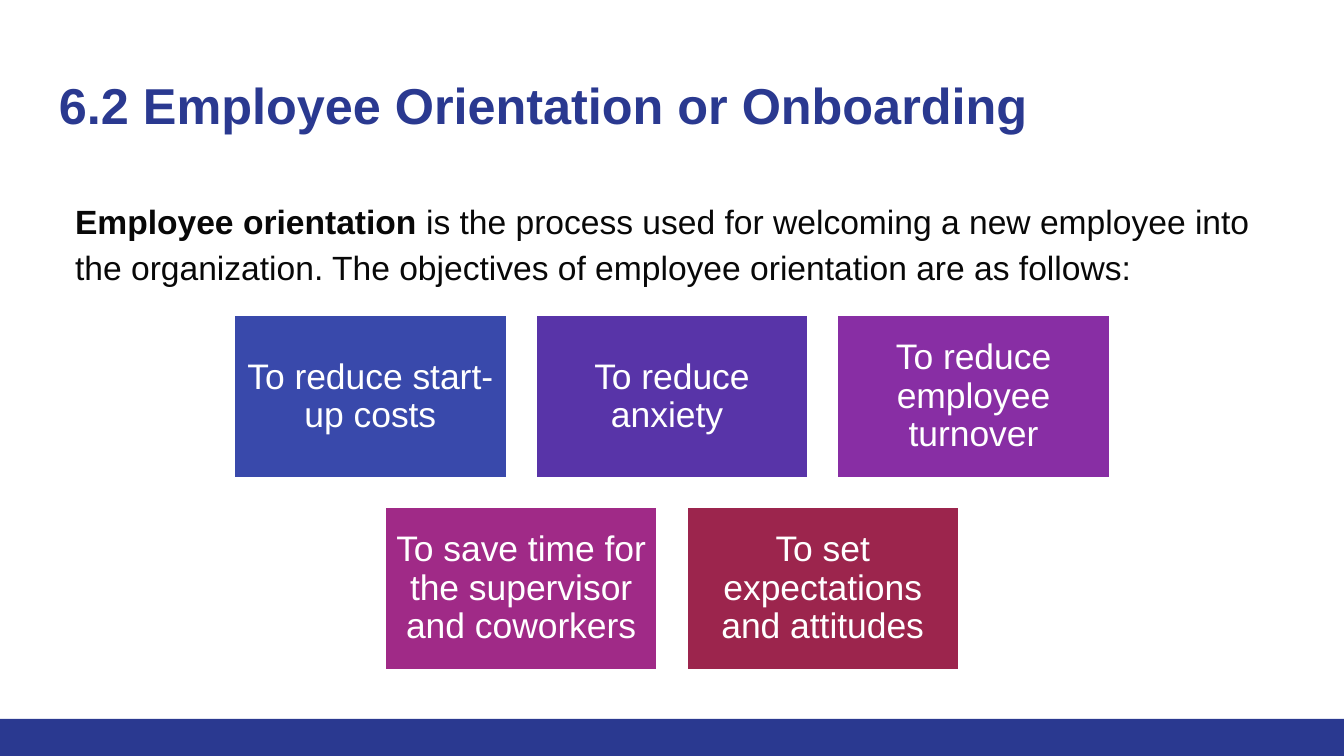
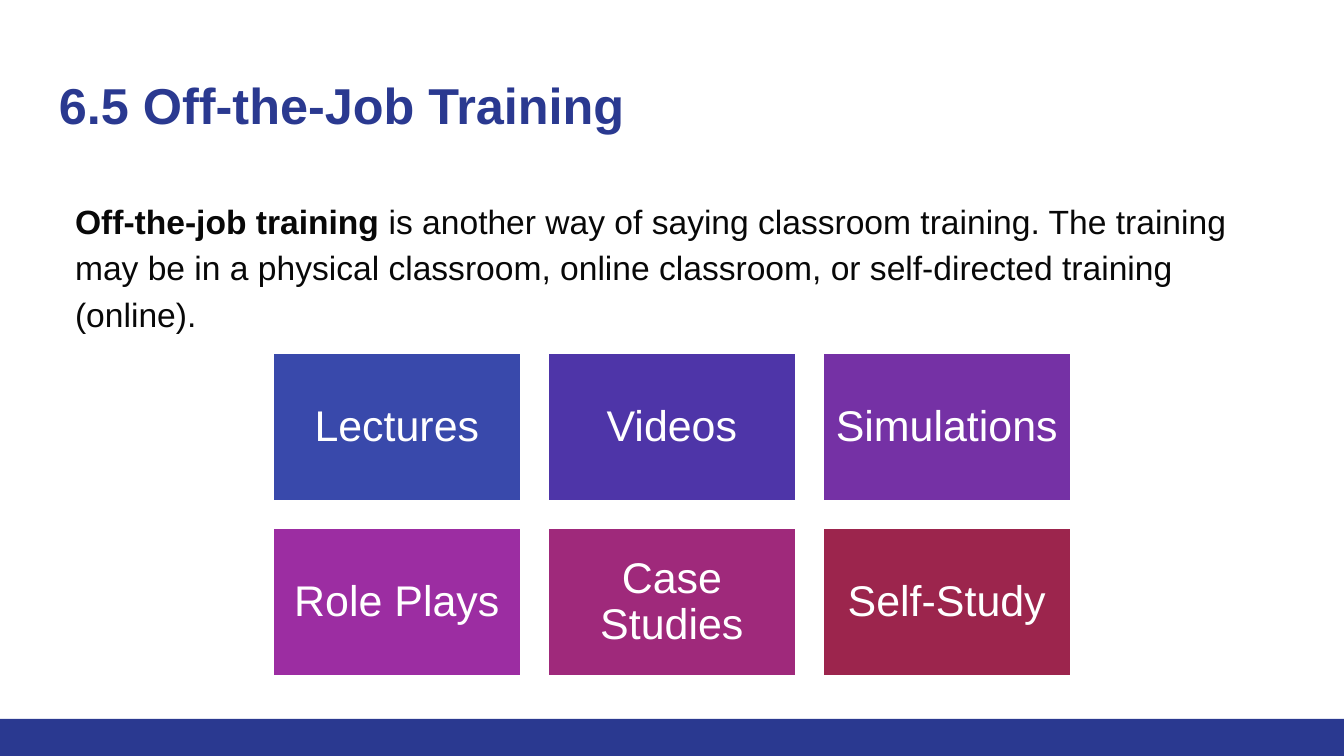
from dataclasses import dataclass

from pptx import Presentation
from pptx.dml.color import RGBColor
from pptx.enum.shapes import MSO_SHAPE
from pptx.enum.text import MSO_ANCHOR, PP_ALIGN
from pptx.util import Inches, Pt

RECTANGLE = MSO_SHAPE.RECTANGLE
MIDDLE, TOP = MSO_ANCHOR.MIDDLE, MSO_ANCHOR.TOP
CENTER, LEFT = PP_ALIGN.CENTER, PP_ALIGN.LEFT


@dataclass(frozen=True)
class Theme:
    font: str = "Arial"
    navy: str = "2A3990"
    ink: str = "080808"
    white: str = "FFFFFF"
    title_size: int = 27
    body_size: int = 18


THEME = Theme()
WIDTH, HEIGHT = Inches(10), Inches(5.625)
MARGIN = 0.034 * WIDTH
CONTENT_WIDTH = WIDTH - 2 * MARGIN
BAND_TOP = 0.951 * HEIGHT
TILE_RATIO = 0.6  # tile height per tile width
GAP_RATIO = 0.1   # gap per tile width

OBJECTIVES = [
    [("To reduce start-up costs", "3949AB"),
     ("To reduce anxiety ", "5834A8"),
     ("To reduce employee turnover", "882EA4")],
    [("To save time for the supervisor and coworkers", "A02A87"),
     ("To set expectations and attitudes", "9C254D")],
]
METHODS = [
    [("Lectures", "3949AB"), ("Videos", "4E35A8"), ("Simulations", "7531A5")],
    [("Role Plays", "9C2DA2"), ("Case Studies", "9F297B"),
     ("Self-Study", "9C254D")],
]


def color(value):
    return RGBColor.from_string(value)


def prepare_frame(shape, inset, anchor=TOP):
    frame = shape.text_frame
    frame.word_wrap = True
    frame.vertical_anchor = anchor
    frame.margin_left = frame.margin_right = Inches(inset)
    frame.margin_top = frame.margin_bottom = Inches(inset)
    return frame


def add_run(paragraph, text, size, text_color, bold=False):
    run = paragraph.add_run()
    run.text = text
    run.font.name = THEME.font
    run.font.size = Pt(size)
    run.font.bold = bold
    run.font.color.rgb = color(text_color)


def add_rectangle(slide, left, top, width, height, fill):
    shape = slide.shapes.add_shape(
        RECTANGLE, int(left), int(top), int(width), int(height))
    shape.shadow.inherit = False
    shape.fill.solid()
    shape.fill.fore_color.rgb = color(fill)
    shape.line.fill.background()
    return shape


def add_text_paragraph(slide, top, height):
    """Add a text box across the content width and return its paragraph."""
    box = slide.shapes.add_textbox(
        int(MARGIN), int(top), int(CONTENT_WIDTH), int(height))
    paragraph = prepare_frame(box, 0.1).paragraphs[0]
    paragraph.alignment = LEFT
    return paragraph


def add_title(slide, text):
    paragraph = add_text_paragraph(slide, 0.08 * HEIGHT, 0.117 * HEIGHT)
    add_run(paragraph, text, THEME.title_size, THEME.navy, bold=True)


def add_definition(slide, term, explanation):
    paragraph = add_text_paragraph(slide, 0.24 * HEIGHT, 0.65 * HEIGHT)
    paragraph.line_spacing = 1.15
    paragraph_properties = paragraph._p.get_or_add_pPr()
    paragraph_properties.set("marL", str(Inches(0.12)))
    paragraph_properties.set("indent", "0")
    add_run(paragraph, term, THEME.body_size, THEME.ink, bold=True)
    add_run(paragraph, explanation, THEME.body_size, THEME.ink)


def add_tile(slide, left, top, width, text, fill, size):
    tile = add_rectangle(slide, left, top, width, TILE_RATIO * width, fill)
    tile.line.color.rgb = color(THEME.white)
    tile.line.width = Pt(2)
    paragraph = prepare_frame(tile, 0.08, MIDDLE).paragraphs[0]
    paragraph.alignment = CENTER
    paragraph.line_spacing = 0.9
    add_run(paragraph, text, size, THEME.white)


def add_tile_rows(slide, rows, top, tile_width, size):
    """Stack rows of equal tiles, each row centred on the slide."""
    gap = GAP_RATIO * tile_width
    column_step = tile_width + gap
    row_step = TILE_RATIO * tile_width + gap
    for row_index, row in enumerate(rows):
        row_left = (WIDTH - len(row) * column_step + gap) / 2
        for column, (text, fill) in enumerate(row):
            add_tile(slide, row_left + column * column_step,
                     top + row_index * row_step, tile_width, text, fill, size)


def add_content_slide(presentation, title, term, explanation):
    slide = presentation.slides.add_slide(presentation.slide_layouts[6])
    add_rectangle(slide, 0, BAND_TOP, WIDTH, HEIGHT - BAND_TOP, THEME.navy)
    add_title(slide, title)
    add_definition(slide, term, explanation)
    return slide


def main():
    presentation = Presentation()
    presentation.slide_width, presentation.slide_height = WIDTH, HEIGHT

    orientation = add_content_slide(
        presentation, "6.2 Employee Orientation or Onboarding",
        "Employee orientation",
        " is the process used for welcoming a new employee into the "
        "organization. The objectives of employee orientation are as follows:")
    add_tile_rows(orientation, OBJECTIVES, 0.416 * HEIGHT, 0.204 * WIDTH, 19)

    off_the_job = add_content_slide(
        presentation, "6.5 Off-the-Job Training",
        "Off-the-job training ",
        "is another way of saying classroom training. The training may be in "
        "a physical classroom, online classroom, or self-directed training "
        "(online).")
    add_tile_rows(off_the_job, METHODS, 0.466 * HEIGHT, 0.186 * WIDTH, 23)

    presentation.save("out.pptx")


if __name__ == "__main__":
    main()
